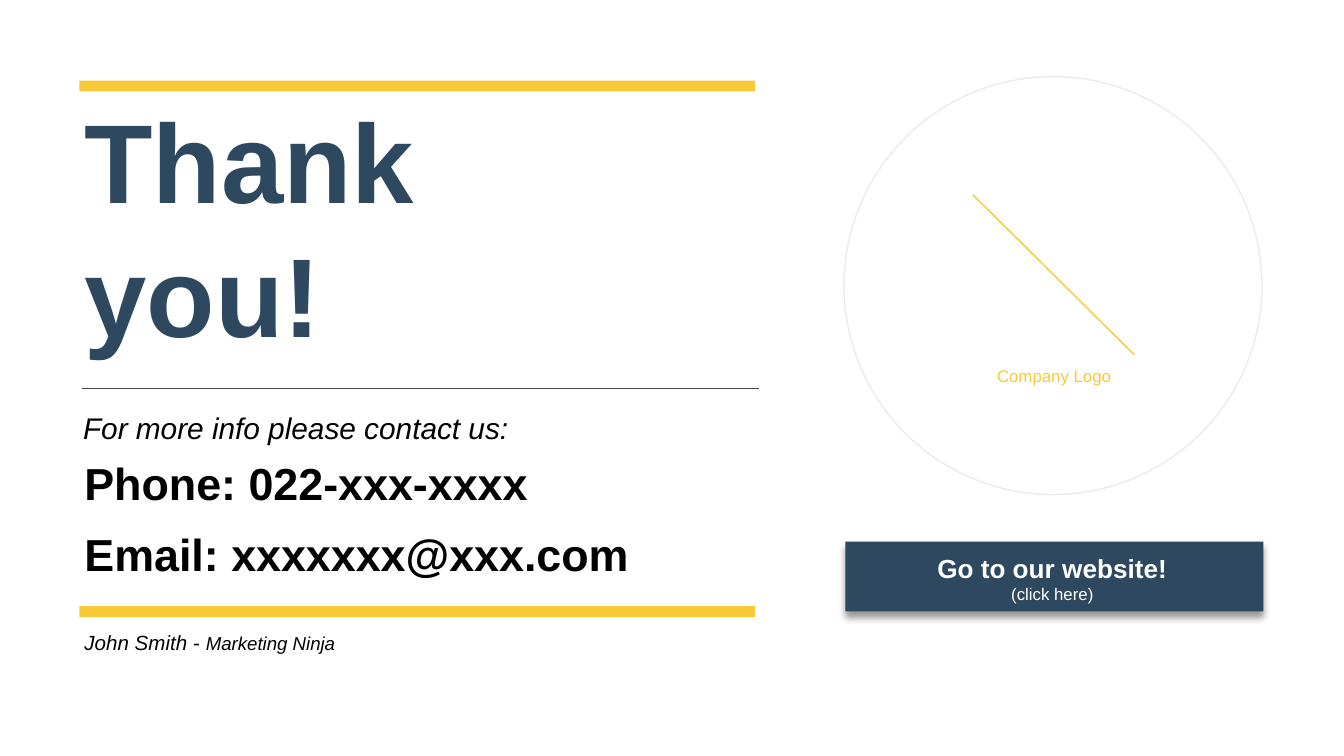
from dataclasses import dataclass

from lxml.etree import SubElement
from pptx import Presentation
from pptx.dml.color import RGBColor
from pptx.enum.shapes import MSO_CONNECTOR, MSO_SHAPE
from pptx.enum.text import MSO_ANCHOR, MSO_AUTO_SIZE, PP_ALIGN
from pptx.oxml.ns import qn
from pptx.util import Emu, Pt

PX = 9144  # 100 px to the inch
SLIDE_WIDTH = 1000
NAVY, YELLOW, BLACK, WHITE = "2E4860", "F8C937", "000000", "FFFFFF"
RULE_GREY, RING_GREY = "444444", "EBEBEB"


@dataclass(frozen=True)
class Box:
    left: int
    top: int
    width: int
    height: int

    def emu(self) -> list[Emu]:
        return [Emu(v * PX) for v in (self.left, self.top, self.width, self.height)]


@dataclass(frozen=True)
class Span:
    text: str
    size: int
    color: str = BLACK
    bold: bool = False
    italic: bool = False


@dataclass(frozen=True)
class TextBlock:
    box: Box
    paras: tuple[tuple[Span, ...], ...]
    align: PP_ALIGN = PP_ALIGN.LEFT
    wrap: bool = True


def rgb(color: str) -> RGBColor:
    return RGBColor.from_string(color)


def fill_text(shape, block: TextBlock) -> None:
    shape.left, shape.top, shape.width, shape.height = block.box.emu()
    frame = shape.text_frame
    frame.word_wrap = block.wrap
    frame.auto_size = MSO_AUTO_SIZE.SHAPE_TO_FIT_TEXT
    frame.vertical_anchor = MSO_ANCHOR.TOP
    for index, spans in enumerate(block.paras):
        para = frame.add_paragraph() if index else frame.paragraphs[0]
        para.alignment = block.align
        for span in spans:
            run = para.add_run()
            run.text = span.text
            font = run.font
            font.name, font.size = "Arial", Pt(span.size)
            font.bold, font.italic = span.bold, span.italic
            font.color.rgb = rgb(span.color)


def add_text(slide, block: TextBlock) -> None:
    fill_text(slide.shapes.add_textbox(*block.box.emu()), block)


def add_bar(slide, box: Box, color: str):
    bar = slide.shapes.add_shape(MSO_SHAPE.RECTANGLE, *box.emu())
    bar.shadow.inherit = False
    bar.fill.solid()
    bar.fill.fore_color.rgb = rgb(color)
    bar.line.fill.background()
    return bar


def add_drop_shadow(shape) -> None:
    effects = shape._element.spPr.find(qn("a:effectLst"))
    shadow = SubElement(effects, qn("a:outerShdw"), blurRad=str(Pt(4)),
                        dist=str(Pt(3)), dir="5400000", rotWithShape="0")
    color = SubElement(shadow, qn("a:srgbClr"), val=BLACK)
    SubElement(color, qn("a:alpha"), val="40000")


def add_line(slide, start: tuple[int, int], end: tuple[int, int], color: str) -> None:
    ends = [Emu(v * PX) for v in (*start, *end)]
    line = slide.shapes.add_connector(MSO_CONNECTOR.STRAIGHT, *ends)
    line.line.color.rgb = rgb(color)
    line.line.width = Pt(0.75)
    SubElement(line._element.spPr, qn("a:effectLst"))


def add_ring(slide, box: Box, color: str) -> None:
    ring = slide.shapes.add_shape(MSO_SHAPE.OVAL, *box.emu())
    ring.shadow.inherit = False
    ring.fill.background()
    ring.line.color.rgb = rgb(color)
    ring.line.width = Pt(0.75)


TITLE = TextBlock(Box(53, 63, 420, 212), ((Span("Thank you!", 60, NAVY, bold=True),),))
BUTTON_LABEL = TextBlock(
    Box(665, 406, 236, 49),
    ((Span("Go to our website!", 14, WHITE, bold=True),),
     (Span("(click here)", 9, WHITE),)),
    align=PP_ALIGN.CENTER)
CONTACTS = (
    TextBlock(Box(52, 300, 476, 37),
              ((Span("For more info please contact us:", 16, italic=True),),)),
    TextBlock(Box(53, 334, 353, 50),
              ((Span("Phone: 022-xxx-xxxx", 24, bold=True),),), wrap=False),
    TextBlock(Box(53, 387, 429, 50),
              ((Span("Email: xxxxxxx@xxx.com", 24, bold=True),),), wrap=False),
    TextBlock(Box(53, 464, 328, 29),
              ((Span("John Smith - ", 11, italic=True),
                Span("Marketing Ninja", 10, italic=True)),)),
)
LOGO_LABEL = TextBlock(Box(732, 267, 158, 25), ((Span("Company Logo", 9, YELLOW),),))


def main() -> None:
    deck = Presentation()
    deck.slide_width = Emu(SLIDE_WIDTH * PX)
    deck.slide_height = Emu(SLIDE_WIDTH * PX * 9 // 16)
    slide = deck.slides.add_slide(deck.slide_layouts[5])

    fill_text(slide.shapes.title, TITLE)
    add_drop_shadow(add_bar(slide, Box(629, 403, 311, 52), NAVY))
    add_text(slide, BUTTON_LABEL)
    add_line(slide, (61, 289), (565, 289), RULE_GREY)
    for block in CONTACTS:
        add_text(slide, block)
    for top in (60, 451):
        add_bar(slide, Box(59, top, 503, 8), YELLOW)

    add_line(slide, (724, 145), (844, 264), YELLOW)
    add_text(slide, LOGO_LABEL)
    add_ring(slide, Box(628, 57, 311, 311), RING_GREY)

    deck.save("out.pptx")


if __name__ == "__main__":
    main()
